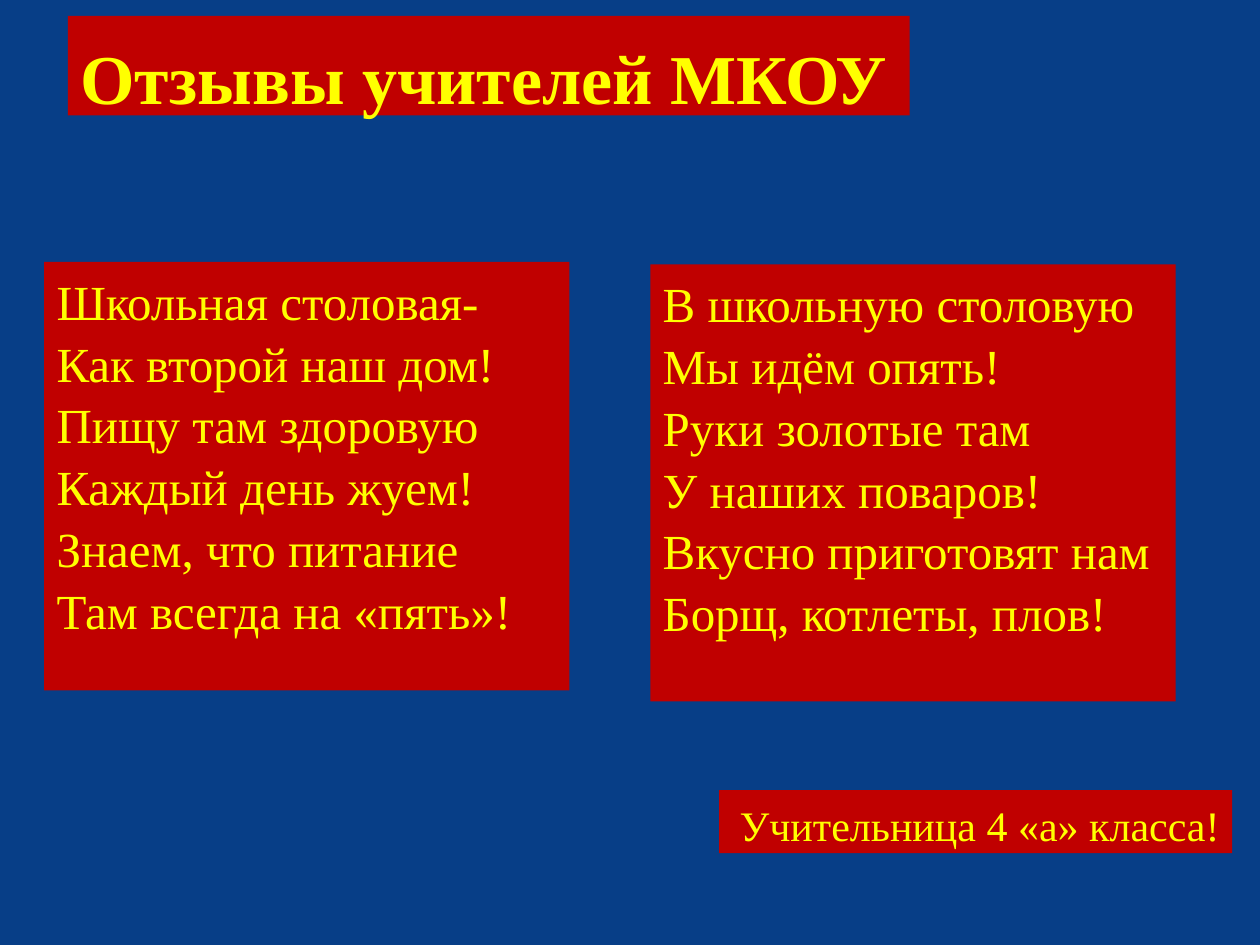
from pptx import Presentation
from pptx.dml.color import RGBColor
from pptx.enum import shapes, text
from pptx.util import Cm, Pt

BLUE, RED, YELLOW = "073E87", "C00000", "FFFF00"
LEFT_VERSE = [
    "Школьная столовая-",
    "Как второй наш дом!",
    "Пищу там здоровую",
    "Каждый день жуем!",
    "Знаем, что питание",
    "Там всегда на «пять»!",
]
RIGHT_VERSE = [
    "В школьную столовую",
    "Мы идём опять!",
    "Руки золотые там",
    "У наших поваров!",
    "Вкусно приготовят нам",
    "Борщ, котлеты, плов!",
]


def paint(fill, color):
    """Give a fill a solid colour from a hex string."""
    fill.solid()
    fill.fore_color.rgb = RGBColor.from_string(color)


def set_values(target, values):
    """Set every attribute named in a dict of format values."""
    for name, value in values.items():
        setattr(target, name, value)


def add_panel(slide, place, lines, size, bold=False, spacing=1.05,
              alignment=text.PP_ALIGN.LEFT, top_margin=0.13):
    """Add a red rectangle holding yellow lines of text."""
    shape = slide.shapes.add_shape(
        shapes.MSO_SHAPE.RECTANGLE, *(Cm(length) for length in place))
    shape.shadow.inherit = False
    shape.line.fill.background()
    paint(shape.fill, RED)
    frame = shape.text_frame
    set_values(frame, {
        "word_wrap": True,
        "vertical_anchor": text.MSO_ANCHOR.TOP,
        "margin_top": Cm(top_margin),
        "margin_bottom": Cm(0),
    })
    for index, line in enumerate(lines):
        paragraph = frame.add_paragraph() if index else frame.paragraphs[0]
        set_values(paragraph, {"alignment": alignment, "line_spacing": spacing})
        run = paragraph.add_run()
        run.text = line
        set_values(run.font, {
            "name": "Times New Roman", "size": Pt(size), "bold": bold})
        paint(run.font.fill, YELLOW)


def main():
    """Build the slide of teachers' reviews."""
    presentation = Presentation()
    set_values(presentation, {"slide_width": Cm(25.4), "slide_height": Cm(19.05)})
    slide = presentation.slides.add_slide(presentation.slide_layouts[6])
    paint(slide.background.fill, BLUE)
    add_panel(slide, (13.11, 5.33, 10.59, 8.81), RIGHT_VERSE, 28)
    add_panel(slide, (0.89, 5.28, 10.59, 8.64), LEFT_VERSE, 28)
    add_panel(slide, (14.5, 15.93, 10.34, 1.27), ["Учительница 4 «а» класса!"], 24,
              alignment=text.PP_ALIGN.RIGHT)
    add_panel(slide, (1.37, 0.32, 16.97, 2.01), ["Отзывы учителей МКОУ"], 40,
              bold=True, spacing=1.07, top_margin=0.26)
    presentation.save("out.pptx")


if __name__ == "__main__":
    main()
